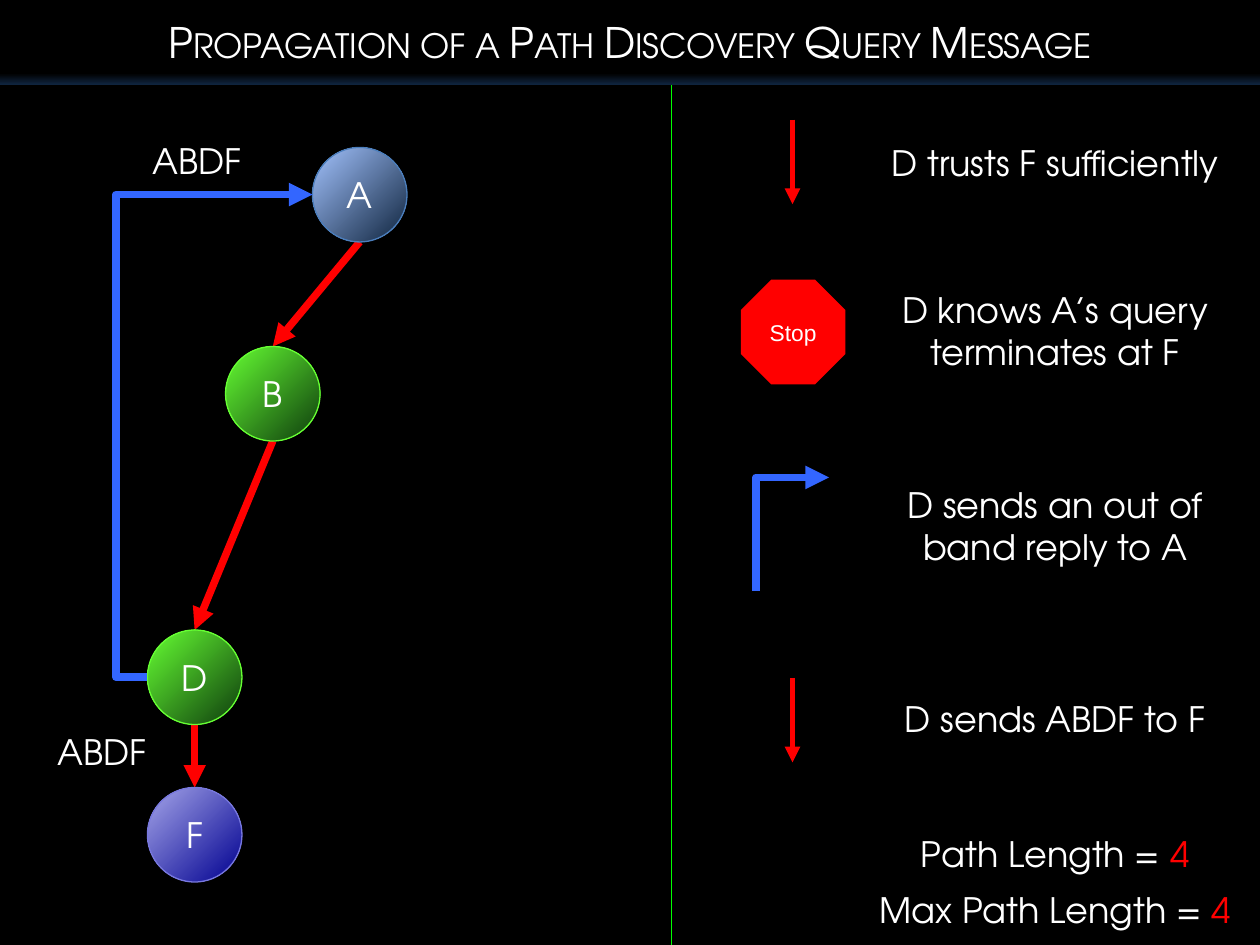
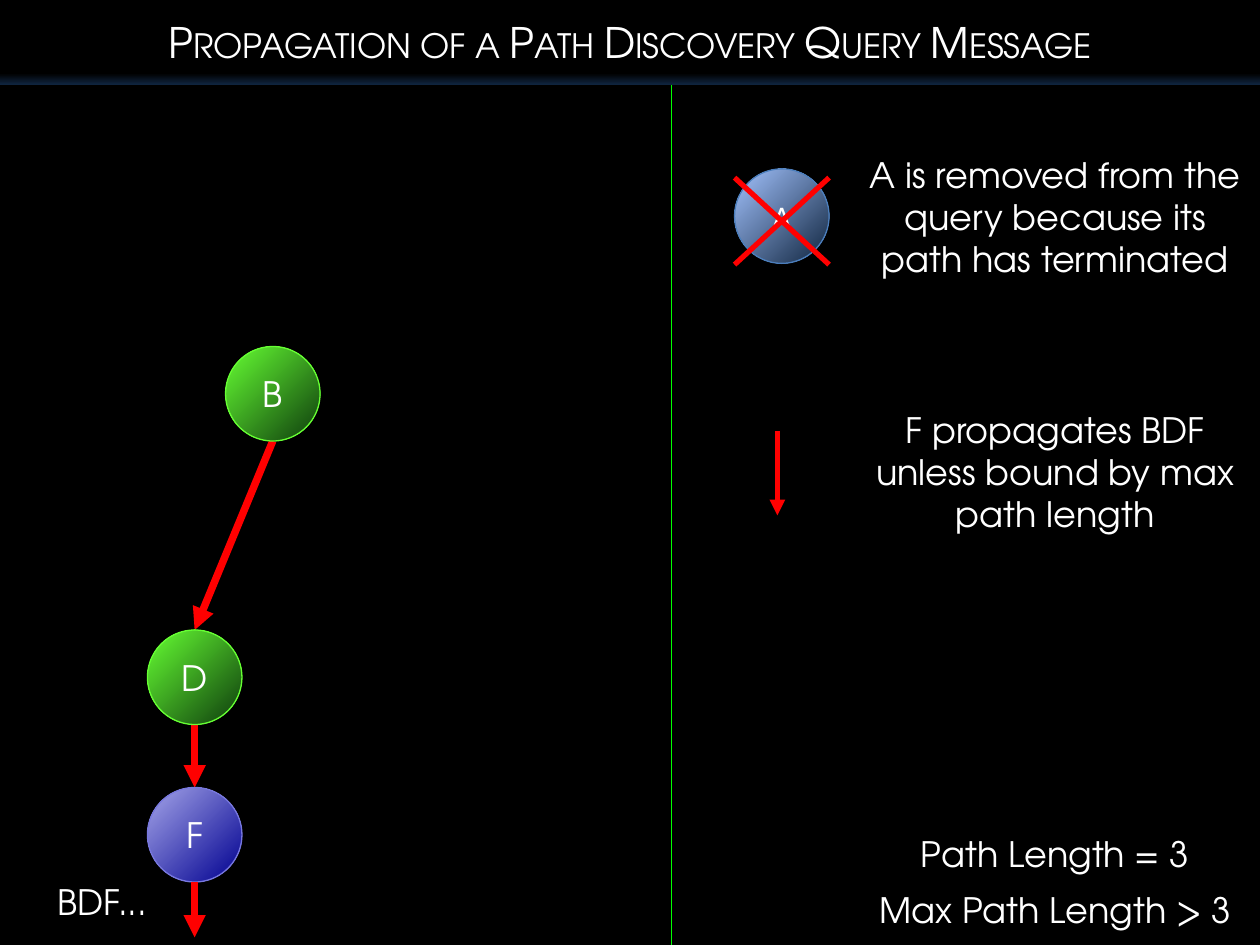
"""Build two slides that show how a path discovery query travels from node to node."""
from lxml import etree
from pptx import Presentation
from pptx.dml.color import RGBColor
from pptx.enum.shapes import MSO_CONNECTOR, MSO_SHAPE
from pptx.enum.text import MSO_ANCHOR, PP_ALIGN
from pptx.oxml.ns import qn
from pptx.util import Inches, Pt

STRAIGHT, ELBOW = MSO_CONNECTOR.STRAIGHT, MSO_CONNECTOR.ELBOW
OVAL, OCTAGON, RECTANGLE = MSO_SHAPE.OVAL, MSO_SHAPE.OCTAGON, MSO_SHAPE.RECTANGLE
LEFT, CENTER = PP_ALIGN.LEFT, PP_ALIGN.CENTER
TOP, MIDDLE = MSO_ANCHOR.TOP, MSO_ANCHOR.MIDDLE

BLACK = RGBColor(0x00, 0x00, 0x00)
WHITE = RGBColor(0xFF, 0xFF, 0xFF)
RED = RGBColor(0xFF, 0x00, 0x00)
BLUE = RGBColor(0x33, 0x66, 0xFF)
GREEN = RGBColor(0x00, 0xFF, 0x00)
NAVY = RGBColor(0x0F, 0x24, 0x3E)
LIME = RGBColor(0x66, 0xFF, 0x33)
FOREST = RGBColor(0x0E, 0x3C, 0x0D)
SKY = RGBColor(0xA4, 0xC4, 0xFF)
STEEL = RGBColor(0x4B, 0x7E, 0xBC)
INDIGO = RGBColor(0x00, 0x00, 0x90)
LAVENDER = RGBColor(0xA5, 0xA5, 0xE9)
VIOLET = RGBColor(0x78, 0x78, 0xDE)

FONT = "TeX Gyre Adventor"
TITLE = "Propagation of a Path Discovery Query Message"
SLIDE_WIDTH, SLIDE_HEIGHT = 10, 7.5
BAND_HEIGHT = 0.67
DIVIDER_X = 5.33
NODE_SIZE = 0.75
LEGEND_LEFT, LEGEND_WIDTH = 6.75, 3.25
LINE_HEIGHT, TEXT_MARGIN = 0.33, 0.11
LEGEND_ARROW = 0.67
PATH_ARROW_WIDTH, LEGEND_LINE_WIDTH, REPLY_WIDTH = 4.25, 3, 4.5

NODE_PLACES = {"A": (2.48, 1.17), "B": (1.79, 2.75), "D": (1.17, 5), "F": (1.17, 6.25)}
NODE_COLORS = {
    "A": (NAVY, SKY, STEEL),
    "B": (FOREST, LIME, LIME),
    "D": (FOREST, LIME, LIME),
    "F": (INDIGO, LAVENDER, VIOLET),
}

SLIDES = [
    {
        "nodes": "ABDF",
        "hops": ["AB", "BD", "DF"],
        "labels": [("ABDF", 1.11, 1.06), ("ABDF", 0.36, 5.75)],
        "legend": [
            ("D trusts F sufficiently", 1.07, 1),
            ("D knows A’s query terminates at F", 2.24, 2),
            ("D sends an out of band reply to A", 3.79, 2),
            ("D sends ABDF to F", 5.49, 1),
        ],
        "legend_arrows": [(6.29, 0.95), (6.29, 5.38)],
        "lengths": [("Path Length = ", "4"), ("Max Path Length = ", "4")],
    },
    {
        "nodes": "BDF",
        "hops": ["BD", "DF"],
        "labels": [("BDF...", 0.36, 6.94)],
        "legend": [
            ("A is removed from the query because its path has terminated", 1.17, 3),
            ("F propagates BDF unless bound by max path length", 3.19, 3),
        ],
        "legend_arrows": [(6.17, 3.42)],
        "lengths": [("Path Length = 3",), ("Max Path Length > 3",)],
    },
]


def write(shape, *texts, size=20, font=FONT, colors=(WHITE, RED), align=CENTER,
          anchor=MIDDLE, wrap=True, small_caps=False):
    """Write one paragraph, with one run for each text."""
    frame = shape.text_frame
    frame.word_wrap = wrap
    frame.vertical_anchor = anchor
    paragraph = frame.paragraphs[0]
    paragraph.alignment = align
    for text, color in zip(texts, colors):
        run = paragraph.add_run()
        run.text = text
        run.font.size = Pt(size)
        run.font.name = font
        run.font.color.rgb = color
        if small_caps:
            run._r.get_or_add_rPr().set("cap", "small")


def add_text(slide, left, top, width, height, *texts, **text_format):
    """Add a text box."""
    box = slide.shapes.add_textbox(Inches(left), Inches(top), Inches(width), Inches(height))
    write(box, *texts, anchor=TOP, **text_format)


def add_shape(slide, kind, left, top, width, height, line=None):
    """Add a preset shape without shadow."""
    shape = slide.shapes.add_shape(kind, Inches(left), Inches(top), Inches(width), Inches(height))
    shape.shadow.inherit = False
    if line is None:
        shape.line.fill.background()
    else:
        shape.line.color.rgb = line
        shape.line.width = Pt(0.75)
    return shape


def fill_gradient(shape, first, last, start=0.0):
    """Fill downwards from the first colour to the last."""
    shape.fill.gradient()
    shape.fill.gradient_angle = 270
    for stop, color, position in zip(shape.fill.gradient_stops, (first, last), (start, 1.0)):
        stop.color.rgb = color
        stop.position = position


def make_radial(shape):
    """Centre the gradient of a shape on its lower right corner."""
    gradient = shape._element.spPr.find(qn("a:gradFill"))
    gradient.remove(gradient.find(qn("a:lin")))
    for old_tile in gradient.findall(qn("a:tileRect")):
        gradient.remove(old_tile)
    circle = etree.SubElement(gradient, qn("a:path"), path="circle")
    etree.SubElement(circle, qn("a:fillToRect"), l="100000", t="100000")
    etree.SubElement(gradient, qn("a:tileRect"), r="-100000", b="-100000")


def add_line(slide, start, end, color, width, arrow=False, bend=None):
    """Add a straight line, or an elbow that turns at the share given by bend."""
    kind = STRAIGHT if bend is None else ELBOW
    connector = slide.shapes.add_connector(kind, *map(Inches, start + end))
    connector.line.color.rgb = color
    connector.line.width = Pt(width)
    properties = connector._element.spPr
    if arrow:
        etree.SubElement(properties.find(qn("a:ln")), qn("a:tailEnd"), type="triangle")
    etree.SubElement(properties, qn("a:effectLst"))
    if bend is not None:
        geometry = properties.find(qn("a:prstGeom"))
        guides = geometry.find(qn("a:avLst"))
        if guides is None:
            guides = etree.SubElement(geometry, qn("a:avLst"))
        etree.SubElement(guides, qn("a:gd"), name="adj1", fmla=f"val {round(bend * 100000)}")


def add_node(slide, name, place, **text_format):
    """Add a round node with its letter."""
    dark, light, line = NODE_COLORS[name]
    node = add_shape(slide, OVAL, *place, NODE_SIZE, NODE_SIZE, line=line)
    fill_gradient(node, dark, light)
    make_radial(node)
    write(node, name, **text_format)


def node_top(name):
    """Return the top middle of a node."""
    left, top = NODE_PLACES[name]
    return left + NODE_SIZE / 2, top


def node_bottom(name):
    """Return the bottom middle of a node."""
    x, top = node_top(name)
    return x, top + NODE_SIZE


def add_base(presentation):
    """Add a slide with the background, title band and divider."""
    slide = presentation.slides.add_slide(presentation.slide_layouts[6])
    slide.background.fill.solid()
    slide.background.fill.fore_color.rgb = BLACK
    add_line(slide, (DIVIDER_X, BAND_HEIGHT), (DIVIDER_X, SLIDE_HEIGHT), GREEN, 0.75)
    band = add_shape(slide, RECTANGLE, 0, 0, SLIDE_WIDTH, BAND_HEIGHT)
    fill_gradient(band, BLACK, NAVY, start=0.87)
    write(band, TITLE, size=24, small_caps=True)
    return slide


def add_content(slide, content):
    """Add the node path on the left and the legend on the right."""
    for origin, target in content["hops"]:
        add_line(slide, node_bottom(origin), node_top(target), RED, PATH_ARROW_WIDTH, arrow=True)
    for name in content["nodes"]:
        add_node(slide, name, NODE_PLACES[name])
    for text, left, top in content["labels"]:
        add_text(slide, left, top, 0.92, 0.44, text, align=LEFT, wrap=False)
    for text, top, lines in content["legend"]:
        height = TEXT_MARGIN + lines * LINE_HEIGHT
        add_text(slide, LEGEND_LEFT, top, LEGEND_WIDTH, height, text)
    for x, top in content["legend_arrows"]:
        add_line(slide, (x, top), (x, top + LEGEND_ARROW), RED, LEGEND_LINE_WIDTH, arrow=True)
    for row, texts in enumerate(content["lengths"]):
        add_text(slide, LEGEND_LEFT, 6.56 + row * 0.44, LEGEND_WIDTH, 0.44, *texts)


def add_reply(slide):
    """Add the reply from D to A, its legend symbol and the stop sign."""
    middle = NODE_SIZE / 2
    (d_left, d_top), (a_left, a_top) = NODE_PLACES["D"], NODE_PLACES["A"]
    add_line(slide, (d_left, d_top + middle), (a_left, a_top + middle), BLUE, REPLY_WIDTH,
             arrow=True, bend=-0.19)
    add_line(slide, (6, 4.69), (6.58, 3.79), BLUE, REPLY_WIDTH, arrow=True, bend=0)
    stop_sign = add_shape(slide, OCTAGON, 5.88, 2.22, 0.83, 0.83)
    stop_sign.adjustments[0] = 0.29
    stop_sign.fill.solid()
    stop_sign.fill.fore_color.rgb = RED
    write(stop_sign, "Stop", size=13, font="Arial", wrap=False)


def add_removal(slide):
    """Add the crossed-out node A and the arrow that leaves F."""
    left, right, top, bottom = 5.83, 6.58, 1.41, 2.1
    add_node(slide, "A", (left, 1.34), size=18, font="Calibri")
    add_line(slide, (left, top), (right, bottom), RED, LEGEND_LINE_WIDTH)
    add_line(slide, (left, bottom), (right, top), RED, LEGEND_LINE_WIDTH)
    x, start = node_bottom("F")
    add_line(slide, (x, start), (x, 7.44), RED, PATH_ARROW_WIDTH, arrow=True)


def main():
    """Build and save the presentation."""
    presentation = Presentation()
    presentation.slide_width = Inches(SLIDE_WIDTH)
    presentation.slide_height = Inches(SLIDE_HEIGHT)
    for content, add_details in zip(SLIDES, (add_reply, add_removal)):
        slide = add_base(presentation)
        add_content(slide, content)
        add_details(slide)
    presentation.save("out.pptx")


if __name__ == "__main__":
    main()
